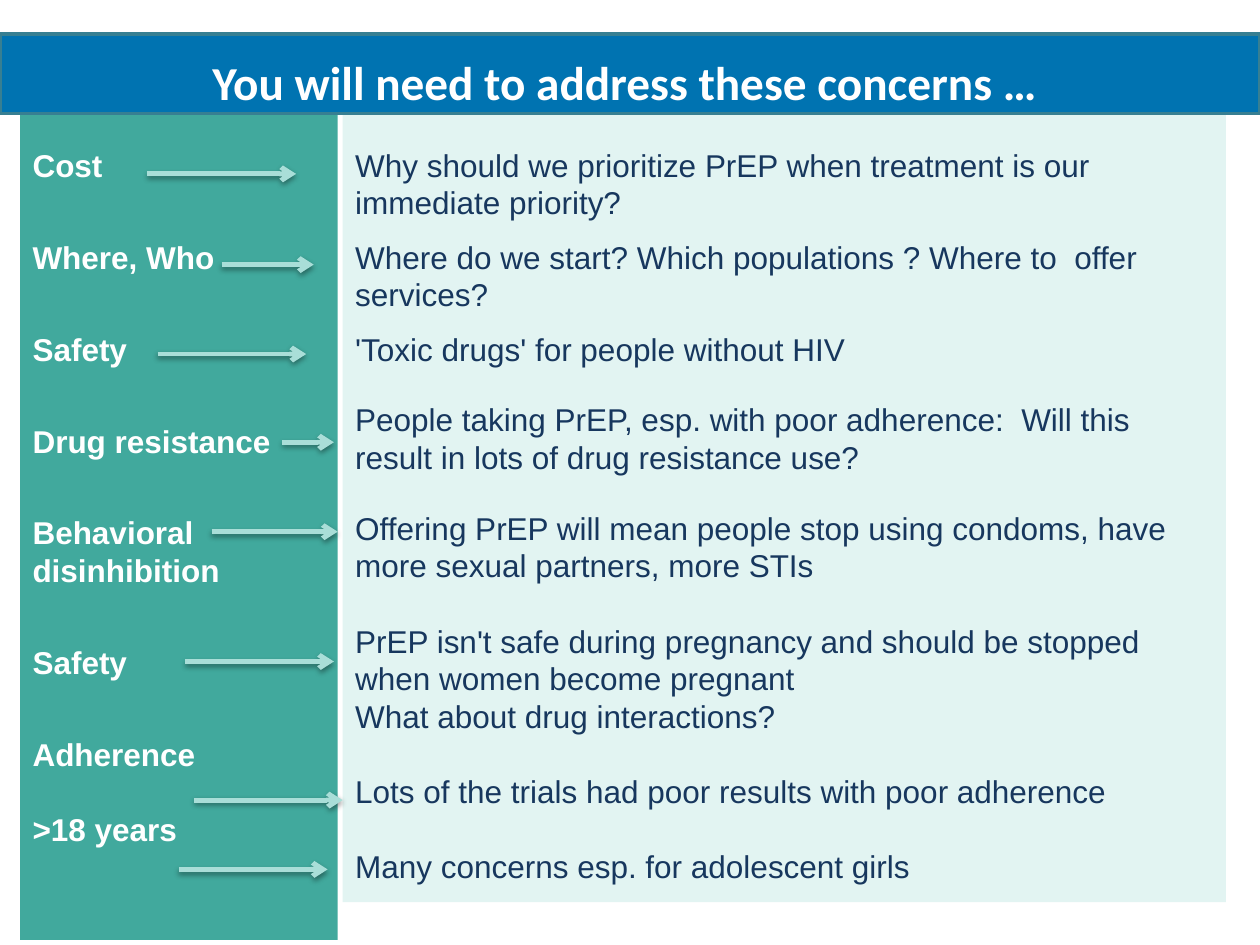
import pptx
import pptx.util
import pptx.dml.color
import pptx.enum.shapes
import pptx.enum.text
import pptx.oxml
import pptx.oxml.ns
from collections import namedtuple

# One grid cell is a tenth of an inch: 100 columns by 75 rows
COLUMNS, ROWS = 100, 75
CELL = pptx.util.Inches(0.1)
Box = namedtuple("Box", "left top width height")

COLORS = {
    "banner": "0073B1", "banner_edge": "377F92", "topics": "41A99D",
    "questions": "E2F4F2", "arrow": "A9DED8", "navy": "17375E", "white": "FFFFFF",
}

# Vertical rhythm, in points
LINE = 21.5
SMALL = 9.5

# Each entry: gap above it, wording
TOPICS = [
    (0, "Cost"),
    (LINE + SMALL, "Where, Who"),
    (LINE + SMALL, "Safety"),
    (LINE + SMALL, "Drug resistance"),
    (LINE + SMALL, "Behavioral disinhibition"),
    (LINE + SMALL, "Safety"),
    (LINE + SMALL, "Adherence"),
    (LINE, ">18 years"),
]
QUESTIONS = [
    (0, "Why should we prioritize PrEP when treatment is our immediate priority?"),
    (SMALL, "Where do we start? Which populations ? Where to  offer services?"),
    (SMALL, "'Toxic drugs' for people without HIV"),
    (2 * SMALL, "People taking PrEP, esp. with poor adherence:  Will this result in lots of drug resistance use?"),
    (2 * SMALL, "Offering PrEP will mean people stop using condoms, have more sexual partners, more STIs"),
    (LINE, "PrEP isn't safe during pregnancy and should be stopped when women become pregnant"),
    (0, "What about drug interactions?"),
    (LINE, "Lots of the trials had poor results with poor adherence"),
    (LINE, "Many concerns esp. for adolescent girls"),
]
# Arrow start column, end column and row, counted from the topic panel's corner
ARROWS = [
    (10.1, 21.9, 5.8), (16, 23.3, 13), (10.9, 22.7, 20.1), (20.8, 24.9, 27.1),
    (15.2, 25.2, 34.2), (13.1, 24.9, 44.5), (13.8, 25.6, 55.5), (12.6, 24.4, 61),
]
SHADOW = (
    '<a:effectLst xmlns:a="http://schemas.openxmlformats.org/drawingml/2006/main">'
    '<a:outerShdw blurRad="40000" dist="20000" dir="5400000" rotWithShape="0">'
    '<a:srgbClr val="000000"><a:alpha val="38000"/></a:srgbClr>'
    '</a:outerShdw></a:effectLst>'
)


def cells(count):
    return round(count * CELL)


def color(name):
    return pptx.dml.color.RGBColor.from_string(COLORS[name])


def add_rectangle(page, box, fill, edge=None):
    shape = page.shapes.add_shape(
        pptx.enum.shapes.MSO_SHAPE.RECTANGLE, *[cells(side) for side in box])
    shape.shadow.inherit = False
    shape.fill.solid()
    shape.fill.fore_color.rgb = color(fill)
    if edge:
        shape.line.color.rgb = color(edge)
        shape.line.width = pptx.util.Pt(2)
    else:
        shape.line.fill.background()
    shape.text_frame.word_wrap = True
    return shape


def add_span(para, text, font, size, ink, bold):
    span = para.add_run()
    span.text = text
    span.font.name = font
    span.font.size = pptx.util.Pt(size)
    span.font.bold = bold
    span.font.color.rgb = color(ink)


def add_panel(page, box, fill, entries, ink, bold):
    """A filled column of entries, spaced by the gap above each."""
    frame = add_rectangle(page, box, fill).text_frame
    frame.vertical_anchor = pptx.enum.text.MSO_ANCHOR.TOP
    frame.margin_top = cells(3.6)
    for index, (gap, text) in enumerate(entries):
        para = frame.add_paragraph() if index else frame.paragraphs[0]
        para.alignment = pptx.enum.text.PP_ALIGN.LEFT
        para.line_spacing = pptx.util.Pt(LINE)
        para.space_before = pptx.util.Pt(gap)
        add_span(para, text, "Arial", 18, ink, bold)


def add_arrows(page, box):
    """Arrows leading from the topics to the questions."""
    for start, end, row in ARROWS:
        height = cells(box.top + row)
        arrow = page.shapes.add_connector(
            pptx.enum.shapes.MSO_CONNECTOR.STRAIGHT,
            cells(box.left + start), height, cells(box.left + end), height)
        arrow.line.color.rgb = color("arrow")
        arrow.line.width = pptx.util.Pt(2.75)
        head = arrow.line._get_or_add_ln().makeelement(
            pptx.oxml.ns.qn("a:tailEnd"), {"type": "arrow"})
        arrow.line._get_or_add_ln().append(head)
        arrow._element.spPr.append(pptx.oxml.parse_xml(SHADOW))


def add_banner(page, box, title):
    frame = add_rectangle(page, box, "banner", "banner_edge").text_frame
    frame.vertical_anchor = pptx.enum.text.MSO_ANCHOR.MIDDLE
    frame.margin_top = cells(1.2)
    frame.margin_bottom = 0
    para = frame.paragraphs[0]
    para.alignment = pptx.enum.text.PP_ALIGN.CENTER
    add_span(para, title, "Calibri", 27, "white", True)


def main():
    deck = pptx.Presentation()
    deck.slide_width, deck.slide_height = cells(COLUMNS), cells(ROWS)
    page = deck.slides.add_slide(deck.slide_layouts[6])

    # Topics on the left, questions on the right
    topics = Box(1.6, 8, 25.2, 66.6)
    add_panel(page, topics, "topics", TOPICS, "white", True)
    add_panel(page, Box(27.2, 8, 70.1, 63.6), "questions", QUESTIONS, "navy", False)
    add_arrows(page, topics)

    # Title banner over the top of both panels
    add_banner(page, Box(0, 2.7, COLUMNS, 6.3), "You will need to address these concerns … ")
    deck.save("out.pptx")


if __name__ == "__main__":
    main()
